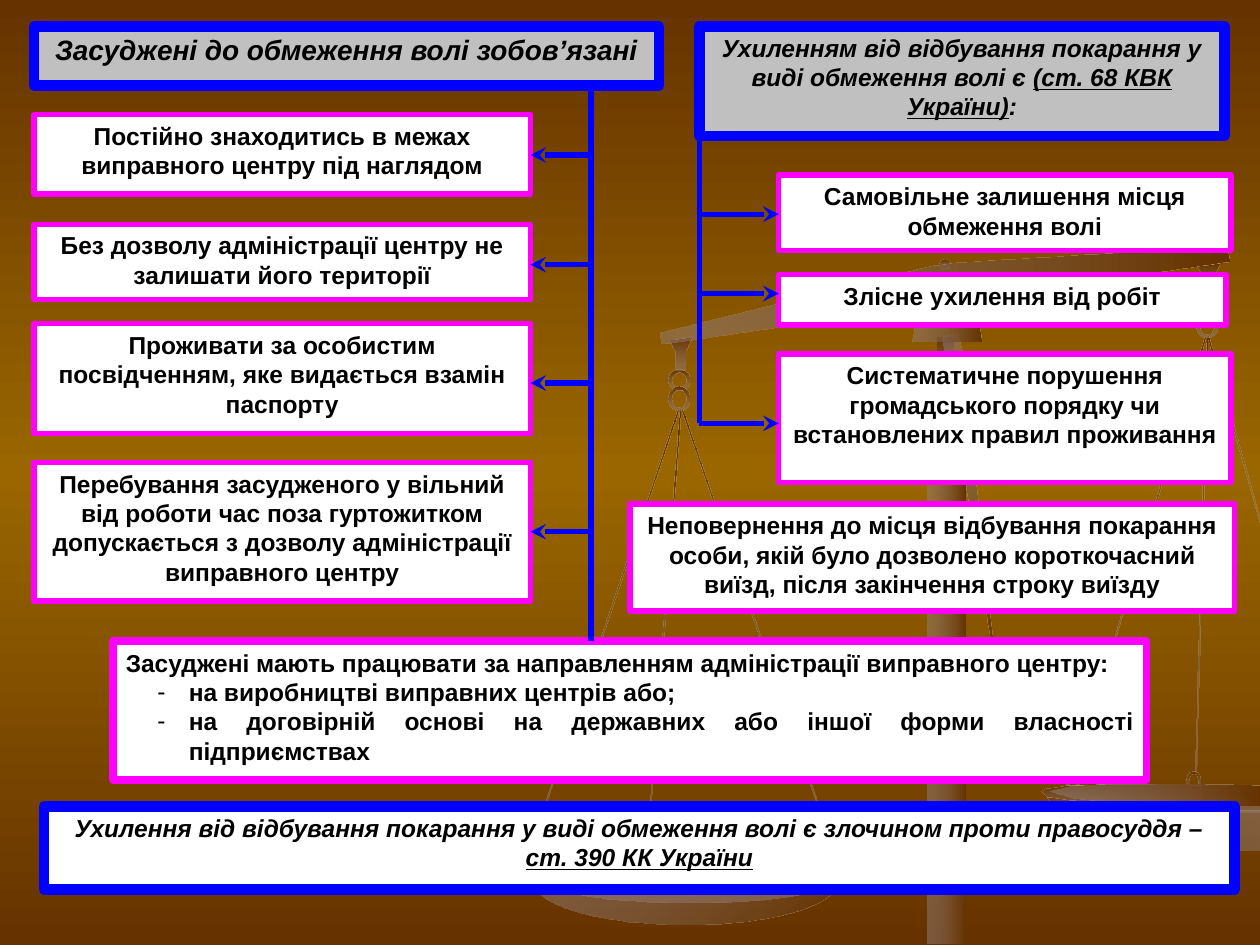
from copy import deepcopy
from lxml.etree import SubElement
from pptx import Presentation
from pptx.dml.color import RGBColor
from pptx.enum.shapes import MSO_CONNECTOR, MSO_SHAPE
from pptx.enum.text import MSO_ANCHOR, PP_ALIGN
from pptx.oxml.ns import qn
from pptx.util import Inches, Pt

HEX = {"blue": "0000FF", "pink": "FF00FF", "white": "FFFFFF", "grey": "C0C0C0",
       "black": "000000", "brown": "663300", "gold": "996600", "dust": "937F79"}
FONT = "Arial"

# Scales: cords (left, top, height, turn)
CORDS = [(9.04, 2.6, 3.6, 16.6), (9.53, 2.66, 3.47, 1.5), (9.79, 2.64, 1.53, 344.6),
         (5.98, 3.15, 3.53, 341), (4.79, 3.16, 3.68, 18.6), (5.27, 3.25, 3.31, 4.2)]
# Chain rings (left, top, width, height)
RINGS = [(5.31, 2.93, .16, .17), (5.31, 3.07, .16, .19), (9.5, 2.49, .16, .19),
         (8.46, 6.09, .11, .17), (9.42, 6.12, .11, .17), (9.41, 6.26, .12, .19)]
# Hooks, right pan, beam, brace and cap (points, turn, light colour first)
HOOK = [(.18, 0), (0, .02), (.05, .12), (.05, .26), (.13, .26), (.13, .11)]
RIM = [(9.58, 6.24), (8.75, 6.23), (8.46, 6.24), (8.31, 6.26), (8.27, 6.28), (8.32, 6.33),
       (8.52, 6.38), (8.94, 6.42), (9.35, 6.44), (10, 6.45), (10, 6.26)]
BOWL = [(8.31, 6.33), (8.42, 6.49), (8.65, 6.63), (8.92, 6.7), (9.28, 6.74), (9.57, 6.75),
        (10, 6.74), (10, 6.43), (9.53, 6.43), (8.86, 6.4)]
DISH = [(9.56, 6.23), (8.77, 6.23), (8.51, 6.24), (8.34, 6.28), (8.52, 6.33), (8.93, 6.37),
        (9.33, 6.38), (10, 6.39), (10, 6.24)]
BEAM = [(9.73, 1.96), (9.76, 2.08), (5.25, 2.73), (5.24, 2.64), (7.37, 2.12), (7.59, 2.09)]
BRACE = [(7.91, 5.39), (7.5, 2.8), (7.48, 2.68), (7.6, 2.65), (7.63, 2.77)]
CAP = [(7.52, 2.47), (7.63, 2.48), (7.72, 2.53), (7.77, 2.6), (7.79, 2.71),
       (7.24, 2.71), (7.26, 2.6), (7.32, 2.53), (7.4, 2.48)]
FORMS = [(RIM, 90, False), (BOWL, 315, False), (DISH, 0, True),
         ([(x + 5.31, y + 2.68) for x, y in HOOK], 90, False),
         ([(x + 9.5, y + 2.09) for x, y in HOOK], 90, False), (BEAM, 0, True)]

# Duties and breaches (left, top, width, height, text)
NOTES = [
    (.27, .91, 3.94, .63, "Постійно знаходитись в межах виправного центру під наглядом"),
    (.27, 1.78, 3.94, .6, "Без дозволу адміністрації центру не залишати його території"),
    (.27, 2.57, 3.94, .87, "Проживати за особистим посвідченням, яке видається взамін паспорту"),
    (.27, 3.67, 3.94, 1.1, "Перебування засудженого у вільний від роботи час поза гуртожитком "
     "допускається з дозволу адміністрації виправного центру"),
    (6.18, 1.39, 3.59, .6, "Самовільне залишення місця обмеження волі"),
    (6.18, 2.18, 3.55, .4, "Злісне ухилення від робіт"),
    (6.18, 2.81, 3.59, 1.02, "Систематичне порушення громадського порядку чи встановлених "
     "правил проживання"),
    (5, 4, 4.8, .85, "Неповернення до місця відбування покарання особи, якій було дозволено "
     "короткочасний виїзд, після закінчення строку виїзду")]
WORK = ["Засуджені мають працювати за направленням адміністрації виправного центру:",
        "на виробництві виправних центрів або;",
        "на договірній основі на державних або іншої форми власності підприємствах"]


def tint(name):
    return RGBColor.from_string(HEX[name])


def paint(shape, turn, flip=False):
    """Brown gradient whose light end is half clear."""
    shape.shadow.inherit = False
    shape.line.fill.background()
    shape.fill.gradient()
    shape.fill.gradient_angle = -turn % 360
    names = ["dust", "brown"] if flip else ["brown", "dust"]
    for stop, name, place in zip(shape.fill.gradient_stops, names, (0, 1)):
        stop.color.rgb = tint(name)
        stop.position = place
    for color in shape._element.spPr.iter(qn("a:srgbClr")):
        if color.get("val") == HEX["dust"]:
            SubElement(color, qn("a:alpha"), val="50000")


def solid(slide, kind, at, turn, flip=False):
    shape = slide.shapes.add_shape(kind, *map(Inches, at))
    paint(shape, turn, flip)
    return shape


def form(slide, points, turn, flip):
    dots = [(Inches(x), Inches(y)) for x, y in points]
    path = slide.shapes.build_freeform(*dots[0], scale=1.0)
    path.add_line_segments(dots[1:], close=True)
    paint(path.convert_to_shape(), turn, flip)


def backdrop(slide):
    fill = slide.background.fill
    fill.gradient()
    fill.gradient_angle = 270
    stops = next(slide._element.iter(qn("a:gsLst")))
    stops.insert(1, deepcopy(stops[0]))
    for stop, name, place in zip(fill.gradient_stops, ["brown", "gold", "brown"], (0, .5, 1)):
        stop.color.rgb = tint(name)
        stop.position = place


def scales(slide):
    oval, rect = MSO_SHAPE.OVAL, MSO_SHAPE.RECTANGLE
    solid(slide, oval, (7.46, 2.06, .08, .08), 90)
    for left, top, height, turn in CORDS:
        solid(slide, rect, (left, top, .01, height), 90).rotation = turn
    for ring in RINGS:
        solid(slide, MSO_SHAPE.DONUT, ring, 90).adjustments[0] = .16
    for item in FORMS:
        form(slide, *item)
    # Left pan
    solid(slide, oval, (4.24, 6.66, 2.4, .68), 45, True)
    solid(slide, oval, (4.16, 6.66, 2.61, .5), 90)
    solid(slide, oval, (4.24, 6.7, 2.47, .38), 0)
    # Post
    solid(slide, rect, (7.36, 3.08, .3, 4.41), 0, True)
    solid(slide, rect, (7.44, 2.68, .13, .42), 90)
    form(slide, BRACE, 45, True)
    form(slide, CAP, 0, True)


def style(run, size=14, slant=False, under=False):
    font = run.font
    font.name, font.size, font.bold = FONT, Pt(size), True
    font.color.rgb = tint("black")
    if slant:
        font.italic = True
    if under:
        font.underline = True


def box(slide, at, fill="white", edge="pink", width=3):
    shape = slide.shapes.add_shape(MSO_SHAPE.RECTANGLE, *map(Inches, at))
    shape.shadow.inherit = False
    shape.fill.solid()
    shape.fill.fore_color.rgb = tint(fill)
    shape.line.color.rgb = tint(edge)
    shape.line.width = Pt(width)
    frame = shape.text_frame
    frame.word_wrap = True
    frame.vertical_anchor = MSO_ANCHOR.TOP
    frame.paragraphs[0].alignment = PP_ALIGN.CENTER
    return frame


def banner(slide, at, parts, fill="grey", size=14):
    """Blue frame; every second part is underlined."""
    para = box(slide, at, fill, "blue", 6).paragraphs[0]
    for i, part in enumerate(parts):
        run = para.add_run()
        run.text = part
        style(run, size, True, i % 2 == 1)


def note(slide, *at, text):
    para = box(slide, at).paragraphs[0]
    para.text = text
    style(para.runs[0])


def listing(slide, at, lines):
    frame = box(slide, at, width=4.5)
    frame.text = "\n".join(lines)
    for i, para in enumerate(frame.paragraphs):
        para.alignment = PP_ALIGN.JUSTIFY
        style(para.runs[0])
        if i:
            para.level = 1
            props = para._p.get_or_add_pPr()
            props.set("marL", str(Inches(.5)))
            props.set("indent", str(Inches(-.25)))
            SubElement(props, qn("a:buFont"), typeface=FONT)
            SubElement(props, qn("a:buChar"), char="-")


def link(slide, x1, y1, x2, y2, head=True):
    line = slide.shapes.add_connector(MSO_CONNECTOR.STRAIGHT, *map(Inches, (x1, y1, x2, y2)))
    line.line.color.rgb = tint("blue")
    line.line.width = Pt(3)
    if head:
        SubElement(line.line._get_or_add_ln(), qn("a:tailEnd"), type="stealth")
    SubElement(line._element.spPr, qn("a:effectLst"))


def tree(slide, x, top, foot, tip, rows):
    link(slide, x, top, x, foot, False)
    for y in rows:
        link(slide, x, y, tip, y)


def main():
    deck = Presentation()
    deck.slide_width, deck.slide_height = Inches(10), Inches(7.5)
    slide = deck.slides.add_slide(deck.slide_layouts[6])
    backdrop(slide)
    scales(slide)
    # Headings
    banner(slide, (.27, .21, 4.96, .47), ["Засуджені до обмеження волі зобов’язані"], size=16)
    banner(slide, (5.55, .21, 4.17, .87),
           ["Ухиленням від відбування покарання у виді обмеження волі є ",
            "(ст. 68 КВК України)", ":"])
    # Boxes
    for *at, text in NOTES:
        note(slide, *at, text=text)
    listing(slide, (.9, 5.09, 8.2, 1.1), WORK)
    banner(slide, (.35, 6.4, 9.45, .66),
           ["Ухилення від відбування покарання у виді обмеження волі є злочином "
            "проти правосуддя – ", "ст. 390 КК України"], "white")
    # Arrows
    tree(slide, 4.69, .68, 5.09, 4.21, [1.23, 2.1, 3.04, 4.22])
    tree(slide, 5.55, 1.07, 3.36, 6.18, [1.7, 2.33, 3.36])
    deck.save("out.pptx")


if __name__ == "__main__":
    main()
